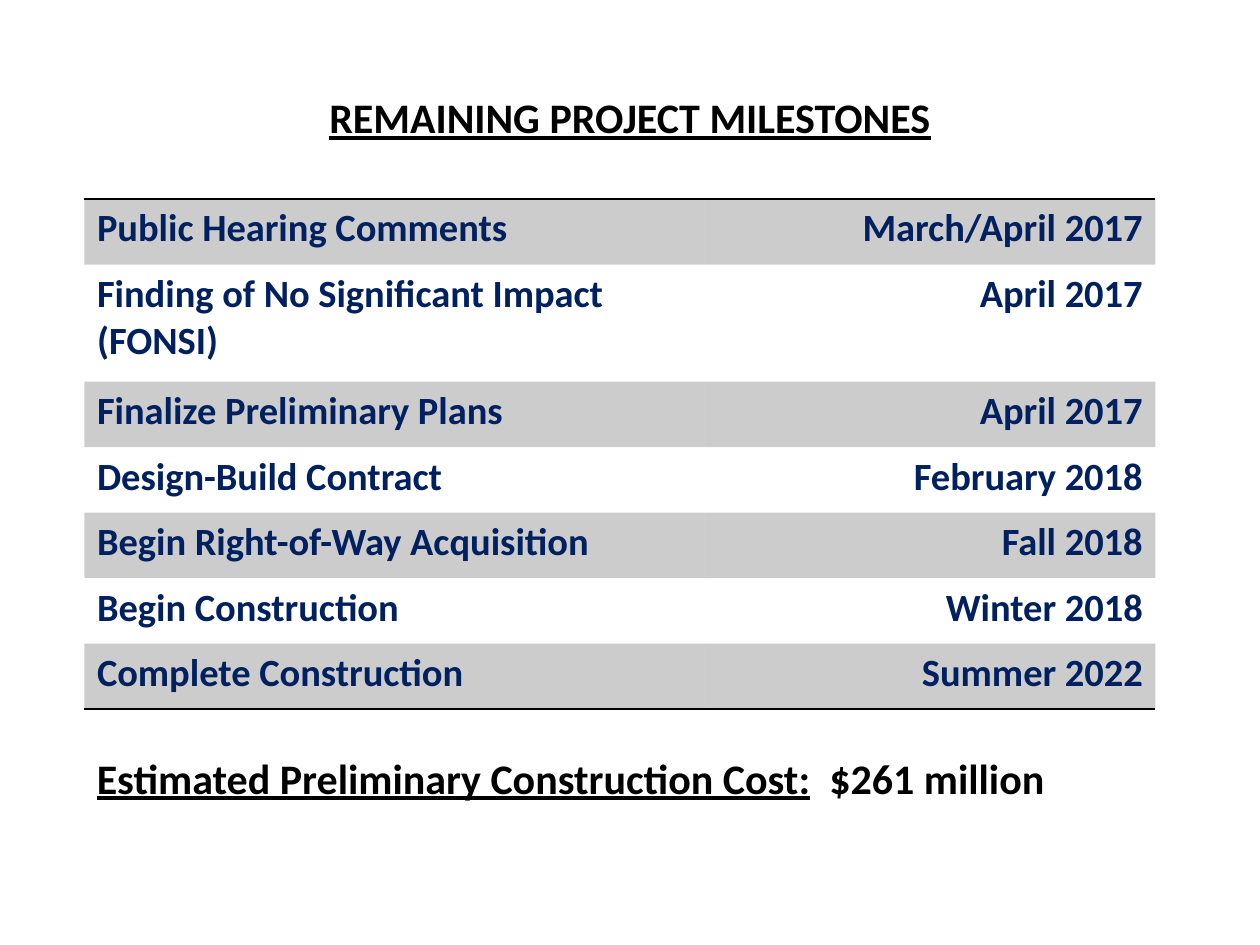
from lxml.etree import SubElement
from pptx import Presentation
from pptx.dml.color import RGBColor
from pptx.enum.text import MSO_ANCHOR, PP_ALIGN
from pptx.oxml import parse_xml
from pptx.oxml.ns import nsdecls, qn
from pptx.util import Inches, Pt

COLORS = {"black": "000000", "navy": "002060"}
NO_STYLE_NO_GRID = "{2D5ABB26-0587-4C30-8999-92F81FD0307C}"
MILESTONES = [
    ("Public Hearing Comments", "March/April 2017"),
    ("Finding of No Significant Impact (FONSI)", "April 2017"),
    ("Finalize Preliminary Plans", "April 2017"),
    ("Design-Build Contract", "February 2018"),
    ("Begin Right-of-Way Acquisition", "Fall 2018"),
    ("Begin Construction", "Winter 2018"),
    ("Complete Construction", "Summer 2022"),
]


def add_run(paragraph, text, size, color, underline=False):
    run = paragraph.add_run()
    run.text = text
    run.font.name = "Calibri"
    run.font.size = Pt(size)
    run.font.bold = True
    run.font.underline = underline
    run.font.color.rgb = RGBColor.from_string(COLORS[color])


def add_rule(cell, edge):
    """Draw a black 1 pt line on one edge of a cell ("lnT" or "lnB")."""
    cell._tc.get_or_add_tcPr().insert(0, parse_xml(
        f'<a:{edge} {nsdecls("a")} w="12700"><a:solidFill>'
        f'<a:srgbClr val="{COLORS["black"]}"/></a:solidFill></a:{edge}>'))


prs = Presentation()
prs.slide_width, prs.slide_height = Inches(10), Inches(7.5)
slide = prs.slides.add_slide(prs.slide_layouts[5])

# Title
title = slide.shapes.title
title.left, title.top = Inches(0.5), Inches(0.3)
title.width, title.height = Inches(9), Inches(1.25)
title.text_frame.vertical_anchor = MSO_ANCHOR.MIDDLE
heading = title.text_frame.paragraphs[0]
heading.alignment = PP_ALIGN.CENTER
add_run(heading, "REMAINING PROJECT MILESTONES", 24, "black", underline=True)

# Milestone table
schedule_frame = slide.shapes.add_table(
    len(MILESTONES), 2, Inches(0.67), Inches(1.58), Inches(8.5), Inches(4.04))
schedule = schedule_frame.table
schedule.first_row = schedule.horz_banding = False
schedule_frame._element.find(".//" + qn("a:tableStyleId")).text = NO_STYLE_NO_GRID
schedule.columns[0].width = Inches(4.92)
schedule.columns[1].width = Inches(3.58)

last = len(MILESTONES) - 1
for row, milestone in enumerate(MILESTONES):
    schedule.rows[row].height = Inches(0.93 if row == 1 else 0.52)
    for col, text in enumerate(milestone):
        cell = schedule.cell(row, col)
        entry = cell.text_frame.paragraphs[0]
        entry.alignment = PP_ALIGN.RIGHT if col else PP_ALIGN.LEFT
        add_run(entry, text, 22, "navy")
        # Every other row has a 20% black band
        if row % 2 == 0:
            cell.fill.solid()
            cell.fill.fore_color.rgb = RGBColor.from_string(COLORS["black"])
            band = cell._tc.tcPr.find(".//" + qn("a:srgbClr"))
            SubElement(band, qn("a:alpha"), val="20000")
        else:
            cell.fill.background()
        # Rules above the first row and below the last
        if row == 0:
            add_rule(cell, "lnT")
        elif row == last:
            add_rule(cell, "lnB")

# Cost estimate
cost = slide.shapes.add_textbox(Inches(0.67), Inches(5.92), Inches(7.93), Inches(0.5))
cost.text_frame.word_wrap = True
estimate = cost.text_frame.paragraphs[0]
add_run(estimate, "Estimated Preliminary Construction Cost:", 24, "black", underline=True)
add_run(estimate, "  $261 million", 24, "black")

prs.save("out.pptx")
